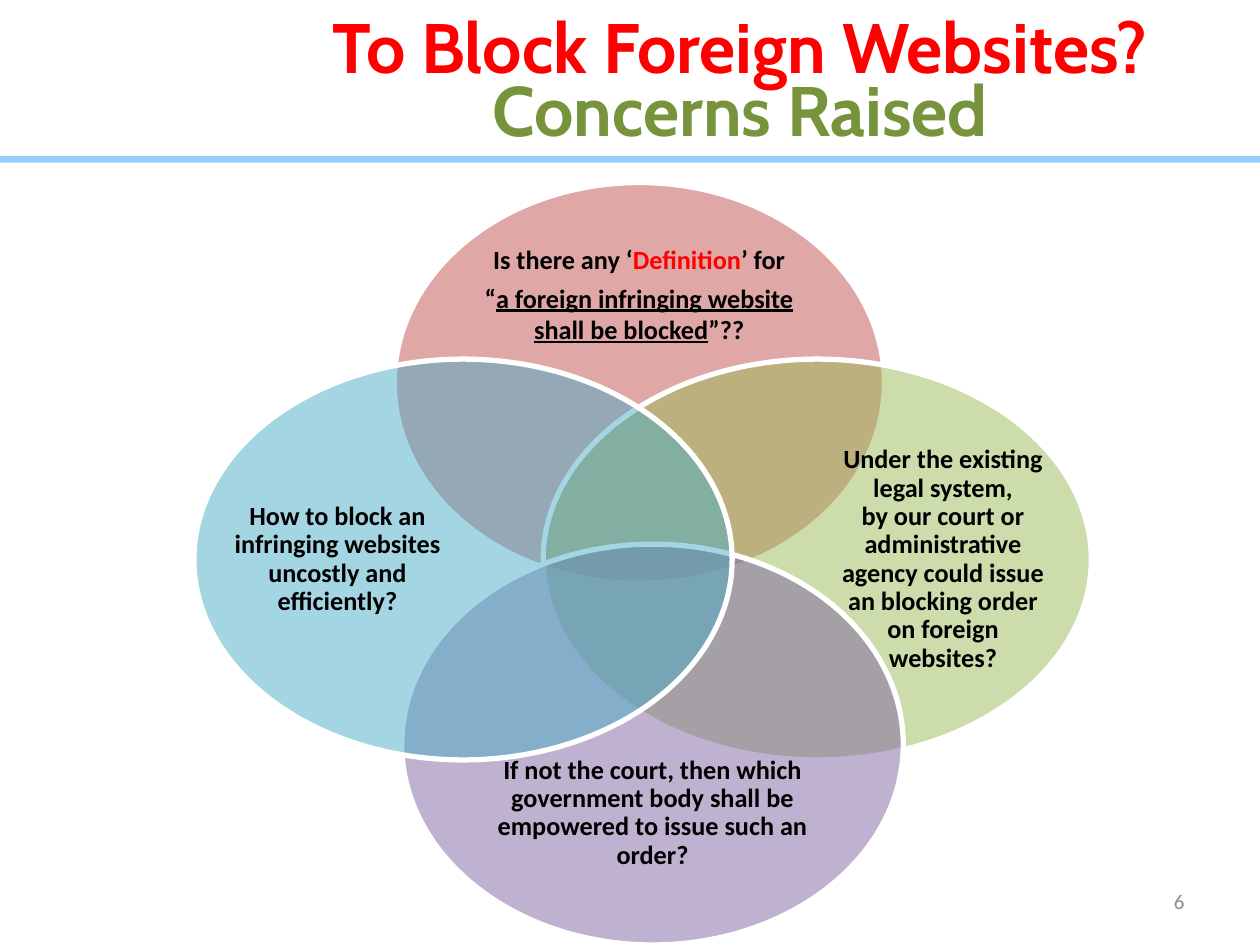
from dataclasses import dataclass
from typing import Optional

from lxml import etree
from pptx import Presentation
from pptx import util as u
from pptx.dml.color import RGBColor
from pptx.enum import shapes, text
from pptx.oxml.ns import qn


@dataclass(frozen=True)
class Theme:
    red: str = "FF0000"
    green: str = "77933C"
    bar: str = "99CCFF"
    ink: str = "000000"
    grey: str = "8C8C8C"
    white: str = "FFFFFF"
    heading: str = "Cabin"
    body: str = "Calibri"
    title_pt: int = 40
    body_pt: int = 15
    number_pt: int = 12
    outline_pt: int = 3
    opacity: int = 50


@dataclass(frozen=True)
class Box:
    left: float
    top: float
    width: float
    height: float

    def emu(self) -> tuple:
        return tuple(u.Cm(v) for v in (self.left, self.top, self.width, self.height))


@dataclass(frozen=True)
class Span:
    words: str
    color: Optional[str] = None
    underline: bool = False


@dataclass(frozen=True)
class Para:
    spans: tuple
    spacing: float = 0.9
    hang: float = 0


@dataclass(frozen=True)
class Concern:
    oval: Box
    label: Box
    fill: str
    paras: tuple


THEME = Theme()
OVAL_H = 8.08
SIDE_TOP = 7.24

CONCERNS = (
    Concern(Box(7.95, 3.68, 9.88, OVAL_H), Box(9.09, 4.78, 7.59, 2.57), "C0504D", (
        Para((Span("Is there any ‘"), Span("Definition", THEME.red), Span("’ for")), 0.5, 0.6),
        Para((Span("“"), Span("a foreign infringing website", underline=True), Span("\v"),
              Span("shall be blocked", underline=True), Span("”??")), 1.0, 0.45))),
    Concern(Box(10.95, SIDE_TOP, 11.05, OVAL_H), Box(16.89, 8.18, 4.24, 6.2), "9BBB59", (
        Para((Span("Under the existing legal system,"), Span("\v"),
              Span("by our court or administrative agency could issue an blocking order "
                   "on foreign websites?"))),)),
    Concern(Box(8.1, 10.97, 10.11, OVAL_H), Box(9.27, 15.11, 7.77, 2.57), "8064A2", (
        Para((Span("If not the court, then which government body shall be empowered "
                   "to issue such an order?"),)),)),
    Concern(Box(3.91, SIDE_TOP, 10.85, OVAL_H), Box(4.72, 8.18, 4.17, 6.2), "4BACC6", (
        Para((Span("How to block an infringing websites uncostly and efficiently?"),)),)),
)


def style(p, font: str, size: int, color: str, bold: bool, align) -> None:
    p.alignment = align
    p.font.name = font
    p.font.size = u.Pt(size)
    p.font.bold = bold
    p.font.color.rgb = RGBColor.from_string(color)


def add_filled(s, kind, box: Box, color: str):
    sp = s.shapes.add_shape(kind, *box.emu())
    sp.shadow.inherit = False
    sp.fill.solid()
    sp.fill.fore_color.rgb = RGBColor.from_string(color)
    sp.line.fill.background()
    return sp


def add_oval(s, box: Box, color: str) -> None:
    sp = add_filled(s, shapes.MSO_SHAPE.OVAL, box, color)
    clr = sp.fill._xPr.find(qn("a:solidFill"))[0]
    etree.SubElement(clr, qn("a:alpha")).set("val", str(THEME.opacity * 1000))
    sp.line.color.rgb = RGBColor.from_string(THEME.white)
    sp.line.width = u.Pt(THEME.outline_pt)


def add_label(s, box: Box, paras: tuple) -> None:
    tf = s.shapes.add_textbox(*box.emu()).text_frame
    tf.word_wrap = True
    tf.vertical_anchor = text.MSO_ANCHOR.MIDDLE
    tf.margin_left = tf.margin_top = tf.margin_right = tf.margin_bottom = 0
    for i, para in enumerate(paras):
        p = tf.add_paragraph() if i else tf.paragraphs[0]
        if para.hang:
            p._p.get_or_add_pPr().set("indent", str(-u.Cm(para.hang)))
        style(p, THEME.body, THEME.body_pt, THEME.ink, True, text.PP_ALIGN.CENTER)
        p.line_spacing = para.spacing
        p.space_after = u.Pt(THEME.body_pt * 0.35)
        for span in para.spans:
            if span.words == "\v":
                p.add_line_break()
                continue
            r = p.add_run()
            r.text = span.words
            if span.color:
                r.font.color.rgb = RGBColor.from_string(span.color)
            if span.underline:
                r.font.underline = True


def set_title(s, box: Box) -> None:
    title = s.shapes.title
    title.left, title.top, title.width, title.height = box.emu()
    tf = title.text_frame
    tf.text = "To Block Foreign Websites?\nConcerns Raised"
    tf.word_wrap = True
    tf.auto_size = text.MSO_AUTO_SIZE.NONE
    tf.vertical_anchor = text.MSO_ANCHOR.BOTTOM
    for p, color in zip(tf.paragraphs, (THEME.red, THEME.green)):
        style(p, THEME.heading, THEME.title_pt, color, True, text.PP_ALIGN.CENTER)
        p.line_spacing = u.Pt(36)


def add_number(s, box: Box, number: int) -> None:
    tf = s.shapes.add_textbox(*box.emu()).text_frame
    tf.word_wrap = True
    tf.vertical_anchor = text.MSO_ANCHOR.MIDDLE
    p = tf.paragraphs[0]
    p.text = str(number)
    style(p, THEME.body, THEME.number_pt, THEME.grey, False, text.PP_ALIGN.RIGHT)


def main() -> None:
    prs = Presentation()
    prs.slide_width, prs.slide_height = u.Cm(25.4), u.Cm(19.05)
    s = prs.slides.add_slide(prs.slide_layouts[5])
    add_filled(s, shapes.MSO_SHAPE.RECTANGLE, Box(0, 3.15, 25.4, 0.13), THEME.bar)
    for concern in CONCERNS:
        add_oval(s, concern.oval, concern.fill)
        add_label(s, concern.label, concern.paras)
    set_title(s, Box(5.59, 0.33, 18.67, 2.84))
    add_number(s, Box(18.21, 17.65, 5.92, 1.02), 6)
    prs.save("out.pptx")


if __name__ == "__main__":
    main()
